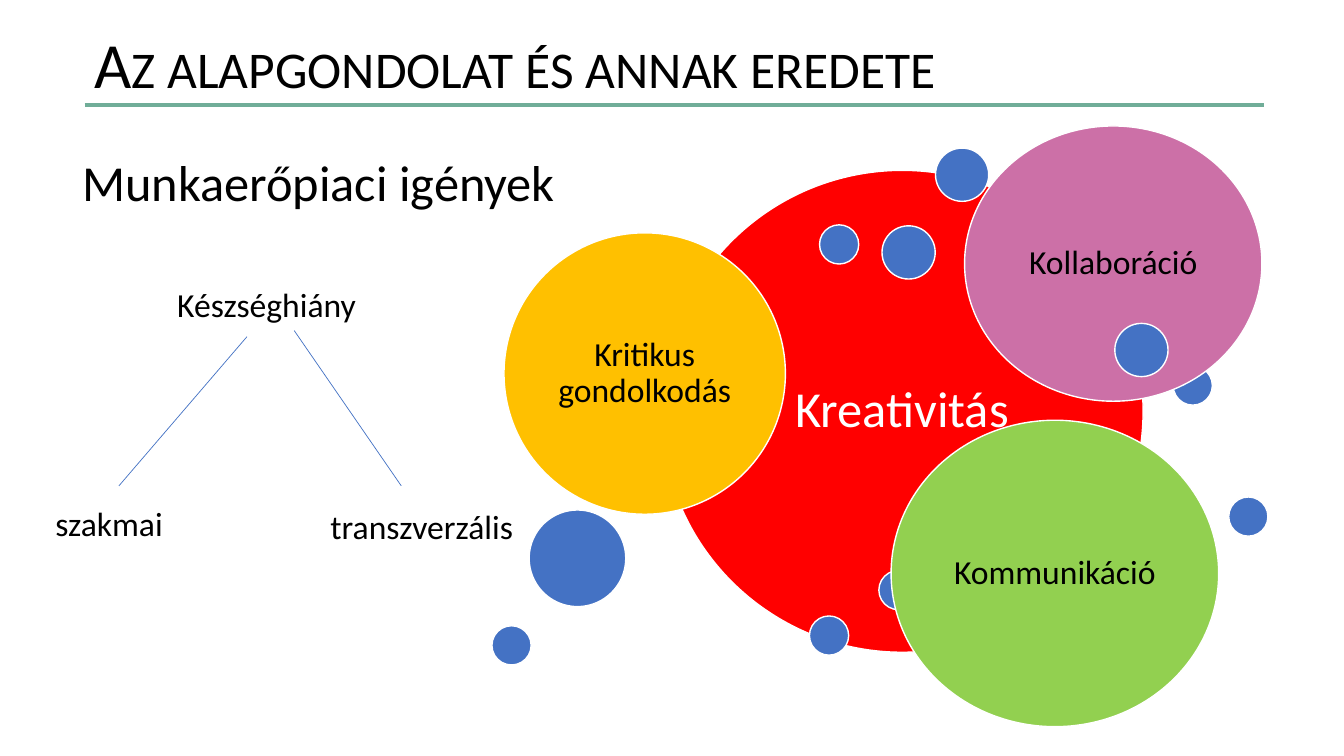
from pptx import Presentation
from pptx.dml.color import RGBColor
from pptx.enum.shapes import MSO_CONNECTOR as Connector, MSO_SHAPE as Shape
from pptx.enum.text import MSO_ANCHOR as Anchor, MSO_AUTO_SIZE as AutoSize, PP_ALIGN as Align
from pptx.oxml.ns import qn
from pptx.util import Pt
from lxml.etree import SubElement


def color(value):
    return RGBColor.from_string(value)


def write(para, text, size, ink):
    span = para.add_run()
    span.text = text
    for name, value in {"name": "Calibri", "size": Pt(size)}.items():
        setattr(span.font, name, value)
    span.font.color.rgb = color(ink)
    return span


BLACK, WHITE, BLUE = "000000", "FFFFFF", "4472C4"
SMALL, MEDIUM, LARGE = 28, 38, 69

deck = Presentation()
deck.slide_width, deck.slide_height = Pt(960), Pt(540)
page = deck.slides.add_slide(deck.slide_layouts[6])

circles = [
    (472.3, 121.7, 344.2, 344.2, "FF0000", "Kreativitás", 36, WHITE, 10.8),
    (668.2, 105.8, MEDIUM),
    (578.2, 440, SMALL),
    (838, 261.4, SMALL),
    (585.4, 160.6, SMALL),
    (360, 166.3, 201, 201, "FFC000", "Kritikus gondolkodás", 24, BLACK, 7.2),
    (630, 161.3, MEDIUM),
    (378, 364.3, LARGE),
    (689, 90, 212.4, 196.6, "CC70A7", "Kollaboráció", 24, BLACK, 7.2),
    (796.3, 231, MEDIUM),
    (351.4, 447, SMALL),
    (627.8, 407.5, SMALL),
    (636.5, 300.2, 234, 218.9, "92D050", "Kommunikáció", 24, BLACK, 7.2),
    (877.7, 355, SMALL),
]
for left, top, width, *skill in circles:
    height, fill = skill[:2] or (width, BLUE)
    circle = page.shapes.add_shape(Shape.OVAL, Pt(left), Pt(top), Pt(width), Pt(height))
    circle.shadow.inherit = False
    circle.fill.solid()
    circle.fill.fore_color.rgb = color(fill)
    circle.line.color.rgb = color(WHITE)
    circle.line.width = Pt(1)
    if skill:
        text, size, ink, inset = skill[2:]
        frame = circle.text_frame
        frame.word_wrap = True
        frame.vertical_anchor = Anchor.MIDDLE
        for side in ("left", "top", "right", "bottom"):
            setattr(frame, f"margin_{side}", Pt(inset))
        para = frame.paragraphs[0]
        for name, value in {"alignment": Align.CENTER, "line_spacing": 0.9}.items():
            setattr(para, name, value)
        write(para, text, size, ink)

lines = [
    (60.5, 75, 903, 75, "70AD98", 3),
    (176.4, 240.5, 85, 347, BLUE, 0.5),
    (210.2, 236.2, 286.6, 347, BLUE, 0.5),
]
for *ends, ink, width in lines:
    line = page.shapes.add_connector(Connector.STRAIGHT, *map(Pt, ends))
    line.line.color.rgb = color(ink)
    line.line.width = Pt(width)
    SubElement(line._element.spPr, qn("a:effectLst"))

labels = [
    ("Az alapgondolat és annak eredete", 60.5, 13.7, 621.4, 63.4, 46, {"cap": "small"}),
    ("Munkaerőpiaci igények", 51.8, 104.4, 355, 51, 36, {}),
    ("Készséghiány", 119.5, 199.4, 143.3, 36, 24, {}),
    ("szakmai", 32.4, 355.7, 92.2, 36, 24, {}),
    ("transzverzális", 229, 357.8, 146.2, 36, 24, {}),
]
for text, left, top, width, height, size, caps in labels:
    box = page.shapes.add_textbox(Pt(left), Pt(top), Pt(width), Pt(height))
    box.text_frame.word_wrap = False
    box.text_frame.auto_size = AutoSize.SHAPE_TO_FIT_TEXT
    span = write(box.text_frame.paragraphs[0], text, size, BLACK)
    for name, value in caps.items():
        span.font._element.set(name, value)

deck.save("out.pptx")
